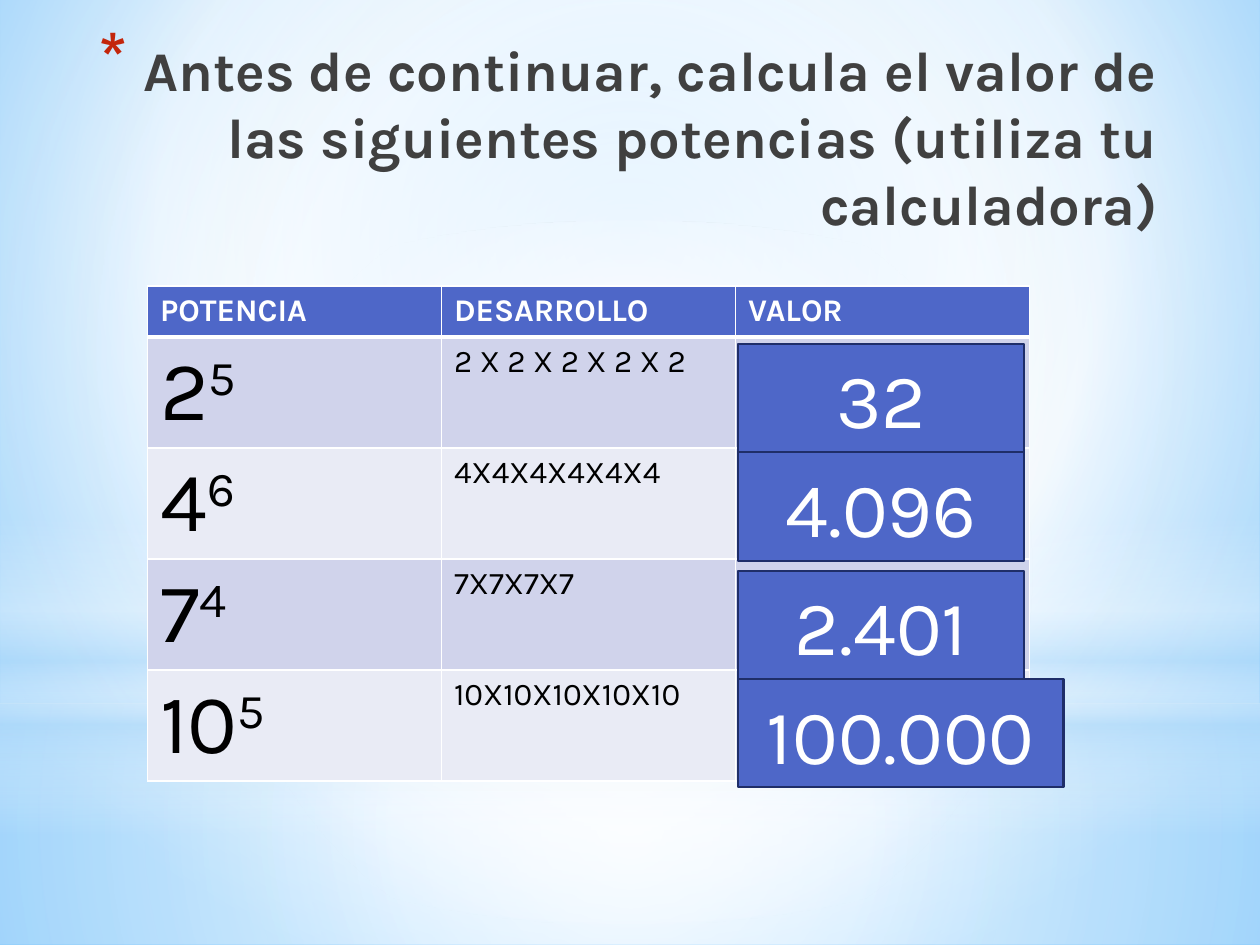
"""Build the slide on powers: a table of expansions with the values on cards."""
from lxml import etree
from pptx import Presentation
from pptx.dml.color import RGBColor as RGB
from pptx.enum.shapes import MSO_SHAPE as SHAPE
from pptx.enum.text import MSO_ANCHOR as ANCHOR, MSO_AUTO_SIZE as AUTO, PP_ALIGN as ALIGN
from pptx.oxml.ns import qn
from pptx.util import Pt

COLORS = {
    "white": "FFFFFF", "black": "000000", "title": "404040", "bullet": "C3260C",
    "blue": "4E67C8", "navy": "1F2E69", "band_dark": "D0D3EB", "band_light": "E9EBF5",
    "sky": "B4DCFA", "sky_mid": "9ED5FF", "sky_deep": "5BB9FF",
}


def add_run(p, text, color, **formats):
    r = p.add_run()
    r.text = text
    r.font.color.rgb = RGB.from_string(COLORS[color])
    for name, value in {"name": "Karla", **formats}.items():
        setattr(r.font, name, value)
    return r


def set_gradient(props, stops, center=None):
    grad = etree.Element(qn("a:gradFill"), rotWithShape="1")
    gs_list = etree.SubElement(grad, qn("a:gsLst"))
    for pos, color, alpha in stops:
        gs = etree.SubElement(gs_list, qn("a:gs"), pos=str(pos * 1000))
        clr = etree.SubElement(gs, qn("a:srgbClr"), val=COLORS[color])
        if alpha < 100:
            etree.SubElement(clr, qn("a:alpha"), val=str(alpha * 1000))
    if center:
        path = etree.SubElement(grad, qn("a:path"), {"path": "circle"})
        sides = {side: str(v * 1000) for side, v in zip("ltrb", center)}
        etree.SubElement(path, qn("a:fillToRect"), sides)
    else:
        etree.SubElement(grad, qn("a:lin"), ang="5400000", scaled="0")
    props.replace(props.find(qn("a:solidFill")), grad)


prs = Presentation()
prs.slide_width, prs.slide_height = Pt(720), Pt(540)
s = prs.slides.add_slide(prs.slide_layouts[5])

s.background.fill.solid()
set_gradient(s.element.find(".//" + qn("p:bgPr")),
             [(0, "sky_mid", 100), (60, "white", 100), (100, "sky_deep", 100)],
             (20, 10, 20, 60))

middle = (50, 50, 50, 50)
glows = [
    (SHAPE.RECTANGLE, 401.8, 138.2, middle,
     [(0, "white", 91), (37, "white", 76), (100, "sky", 79)]),
    (SHAPE.RECTANGLE, 0, 401.8, middle,
     [(0, "white", 89), (48, "white", 62), (100, "sky", 79)]),
    (SHAPE.RECTANGLE, 296.6, 180, None,
     [(0, "white", 0), (29, "white", 30), (45, "sky", 40),
      (55, "white", 26), (65, "sky", 60), (100, "white", 0)]),
    (SHAPE.OVAL, 126, 401.8, middle, [(0, "white", 100), (56, "white", 0)]),
]
for kind, top, height, center, stops in glows:
    sp = s.shapes.add_shape(kind, 0, Pt(top), Pt(720), Pt(height))
    sp.shadow.inherit = False
    sp.line.fill.background()
    sp.fill.solid()
    set_gradient(sp.element.spPr, stops, center)

title = s.shapes.title
s.shapes.element.append(title.element)
title.left, title.top, title.width, title.height = Pt(16.6), Pt(16.6), Pt(652.3), Pt(90)
tf = title.text_frame
for name, value in {"word_wrap": True, "auto_size": AUTO.NONE,
                    "vertical_anchor": ANCHOR.TOP}.items():
    setattr(tf, name, value)
p = tf.paragraphs[0]
p.alignment = ALIGN.RIGHT
add_run(p, "Antes de continuar, calcula el valor de las siguientes potencias "
        "(utiliza tu calculadora)", "title", size=Pt(32), bold=True)
pPr = p._p.get_or_add_pPr()
pPr.set("marL", str(Pt(25.2)))
pPr.set("indent", str(-Pt(25.2)))
bullet_color = etree.SubElement(pPr, qn("a:buClr"))
etree.SubElement(bullet_color, qn("a:srgbClr"), val=COLORS["bullet"])
etree.SubElement(pPr, qn("a:buSzPct"), val="128000")
etree.SubElement(pPr, qn("a:buChar"), char="*")

headers = ["POTENCIA", "DESARROLLO", "VALOR"]
powers = [
    ("2", "5", "2 X 2 X 2 X 2 X 2"),
    ("4", "6", "4X4X4X4X4X4"),
    ("7", "4", "7X7X7X7"),
    ("10", "5", "10X10X10X10X10"),
]
frame = s.shapes.add_table(5, 3, Pt(84.3), Pt(163.4), Pt(504), Pt(288.7))
table = frame.table
for col in table.columns:
    col.width = Pt(168)
for i, row in enumerate(table.rows):
    row.height = Pt(29.2)
    fill = "blue" if i == 0 else "band_dark" if i % 2 else "band_light"
    for cell in row.cells:
        tcPr = cell._tc.get_or_add_tcPr()
        for side in "LRTB":
            thick = (i, side) in [(0, "B"), (1, "T")]
            ln = etree.SubElement(tcPr, qn("a:ln" + side), w=str(Pt(3 if thick else 1)))
            solid = etree.SubElement(ln, qn("a:solidFill"))
            etree.SubElement(solid, qn("a:srgbClr"), val=COLORS["white"])
        cell.fill.solid()
        cell.fill.fore_color.rgb = RGB.from_string(COLORS[fill])
frame.height = Pt(288.7)

for j, header in enumerate(headers):
    add_run(table.cell(0, j).text_frame.paragraphs[0], header, "white",
            size=Pt(18), bold=True)
for i, (base, exponent, expansion) in enumerate(powers, 1):
    p = table.cell(i, 0).text_frame.paragraphs[0]
    add_run(p, base, "black", size=Pt(48), bold=False)
    r = add_run(p, exponent, "black", size=Pt(48), bold=False)
    r.font._element.set("baseline", "30000")
    add_run(table.cell(i, 1).text_frame.paragraphs[0], expansion, "black",
            size=Pt(18), bold=False)

cards = [("32", 196.6, 163.4), ("4.096", 258.5, 163.4),
         ("2.401", 326.2, 163.4), ("100.000", 388.1, 185.8)]
for value, top, width in cards:
    sp = s.shapes.add_shape(SHAPE.RECTANGLE, Pt(421.9), Pt(top), Pt(width), Pt(61.9))
    sp.shadow.inherit = False
    sp.fill.solid()
    sp.fill.fore_color.rgb = RGB.from_string(COLORS["blue"])
    sp.line.color.rgb = RGB.from_string(COLORS["navy"])
    sp.line.width = Pt(1.25)
    tf = sp.text_frame
    tf.vertical_anchor = ANCHOR.MIDDLE
    p = tf.paragraphs[0]
    p.alignment = ALIGN.CENTER
    add_run(p, value, "white", size=Pt(44))

prs.save("out.pptx")
